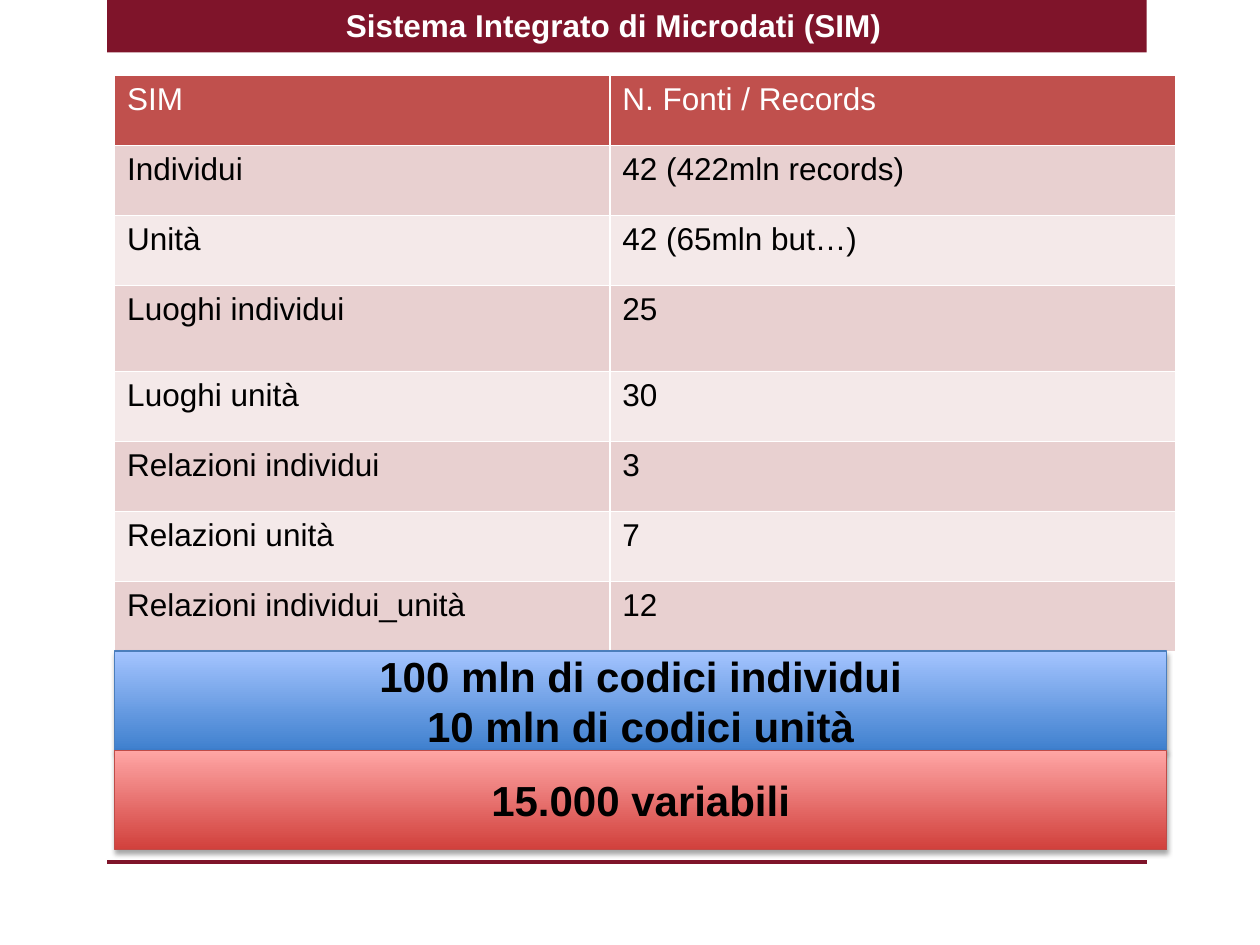
"""Build the SIM slide: title band, table of sources and two summary boxes."""
import pptx
import pptx.dml.color
import pptx.enum.shapes
import pptx.enum.text
import pptx.oxml
import pptx.oxml.ns
import pptx.util

Pt = pptx.util.Pt
SHAPE = pptx.enum.shapes.MSO_SHAPE
CENTER = pptx.enum.text.PP_ALIGN.CENTER
MIDDLE = pptx.enum.text.MSO_ANCHOR.MIDDLE

TITLE = "Sistema Integrato di Microdati (SIM)"
ROWS = [
    ("SIM", "N. Fonti / Records"),
    ("Individui", "42 (422mln records)"),
    ("Unità", "42 (65mln but…)"),
    ("Luoghi individui", "25"),
    ("Luoghi unità", "30"),
    ("Relazioni individui", "3"),
    ("Relazioni unità", "7"),
    ("Relazioni individui_unità", "12"),
]
TOTALS = [
    ("100 mln di codici individui\n10 mln di codici unità", "3F80CE", "A4C4FF", "4B7EBC"),
    ("15.000 variabili", "D1403C", "FFA6A5", "BF4C48"),
]
BRAND, HEADER, BANDS = "7F142A", "C0504D", ("F4E9E9", "E8D0D0")
BAND_LEFT, BAND_WIDTH, RULE_TOP = 61.2, 594, 492.5
LEFT, TABLE_TOP, COL_WIDTHS = 65.5, 43.2, (283, 323.3)
ROW_HEIGHT, TALL_ROW, TALL_HEIGHT = 40, 3, 49
BOX_TOP, BOX_WIDTH, BOX_HEIGHT = 372, 601.2, 56.8
SHADOW = (
    '<a:outerShdw %s blurRad="39370" dist="22860" dir="5400000" rotWithShape="0">'
    '<a:srgbClr val="000000"><a:alpha val="35000"/></a:srgbClr></a:outerShdw>'
) % pptx.oxml.ns.nsdecls("a")


def rgb(value):
    return pptx.dml.color.RGBColor.from_string(value)


def write(tf, text, size, color, bold=False, align=None):
    tf.text = text
    for p in tf.paragraphs:
        p.alignment = align
        for r in p.runs:
            r.font.name, r.font.size, r.font.bold = "Arial", Pt(size), bold
            r.font.color.rgb = rgb(color)


def add_rect(s, left, top, width, height):
    sp = s.shapes.add_shape(SHAPE.RECTANGLE, Pt(left), Pt(top), Pt(width), Pt(height))
    sp.shadow.inherit = False
    return sp


def add_title(s):
    band = add_rect(s, BAND_LEFT, 0, BAND_WIDTH, 30)
    band.fill.solid()
    band.fill.fore_color.rgb = rgb(BRAND)
    band.line.fill.background()
    rule = s.shapes.add_connector(
        pptx.enum.shapes.MSO_CONNECTOR.STRAIGHT,
        Pt(BAND_LEFT), Pt(RULE_TOP), Pt(BAND_LEFT + BAND_WIDTH), Pt(RULE_TOP))
    rule.line.color.rgb = rgb(BRAND)
    rule.line.width = Pt(2)
    rule._element.spPr.append(
        pptx.oxml.parse_xml("<a:effectLst %s/>" % pptx.oxml.ns.nsdecls("a")))
    tf = s.shapes.add_textbox(Pt(54), Pt(0), Pt(593.3), Pt(29)).text_frame
    tf.word_wrap = True
    write(tf, TITLE, 18, "FFFFFF", True, CENTER)


def add_sources(s):
    heights = [TALL_HEIGHT if i == TALL_ROW else ROW_HEIGHT for i in range(len(ROWS))]
    table = s.shapes.add_table(
        len(ROWS), len(COL_WIDTHS), Pt(LEFT), Pt(TABLE_TOP),
        Pt(sum(COL_WIDTHS)), Pt(sum(heights))).table
    for column, width in zip(table.columns, COL_WIDTHS):
        column.width = Pt(width)
    for i, texts in enumerate(ROWS):
        table.rows[i].height = Pt(heights[i])
        for j, text in enumerate(texts):
            cell = table.cell(i, j)
            cell.fill.solid()
            cell.fill.fore_color.rgb = rgb(BANDS[i % 2] if i else HEADER)
            write(cell.text_frame, text, 18, "000000" if i else "FFFFFF")


def add_totals(s):
    for i, (text, dark, light, edge) in enumerate(TOTALS):
        sp = add_rect(s, LEFT, BOX_TOP + i * BOX_HEIGHT, BOX_WIDTH, BOX_HEIGHT)
        sp.fill.gradient()
        sp.fill.gradient_angle = 90
        for stop, color in zip(sp.fill.gradient_stops, (dark, light)):
            stop.color.rgb = rgb(color)
        sp.line.color.rgb = rgb(edge)
        sp.line.width = Pt(0.75)
        effects = sp._element.spPr.find(pptx.oxml.ns.qn("a:effectLst"))
        effects.append(pptx.oxml.parse_xml(SHADOW))
        sp.text_frame.vertical_anchor = MIDDLE
        write(sp.text_frame, text, 24, "000000", True, CENTER)


def main():
    prs = pptx.Presentation()
    prs.slide_width, prs.slide_height = Pt(720), Pt(540)
    s = prs.slides.add_slide(prs.slide_layouts[6])
    add_title(s)
    add_sources(s)
    add_totals(s)
    prs.save("out.pptx")


if __name__ == "__main__":
    main()
